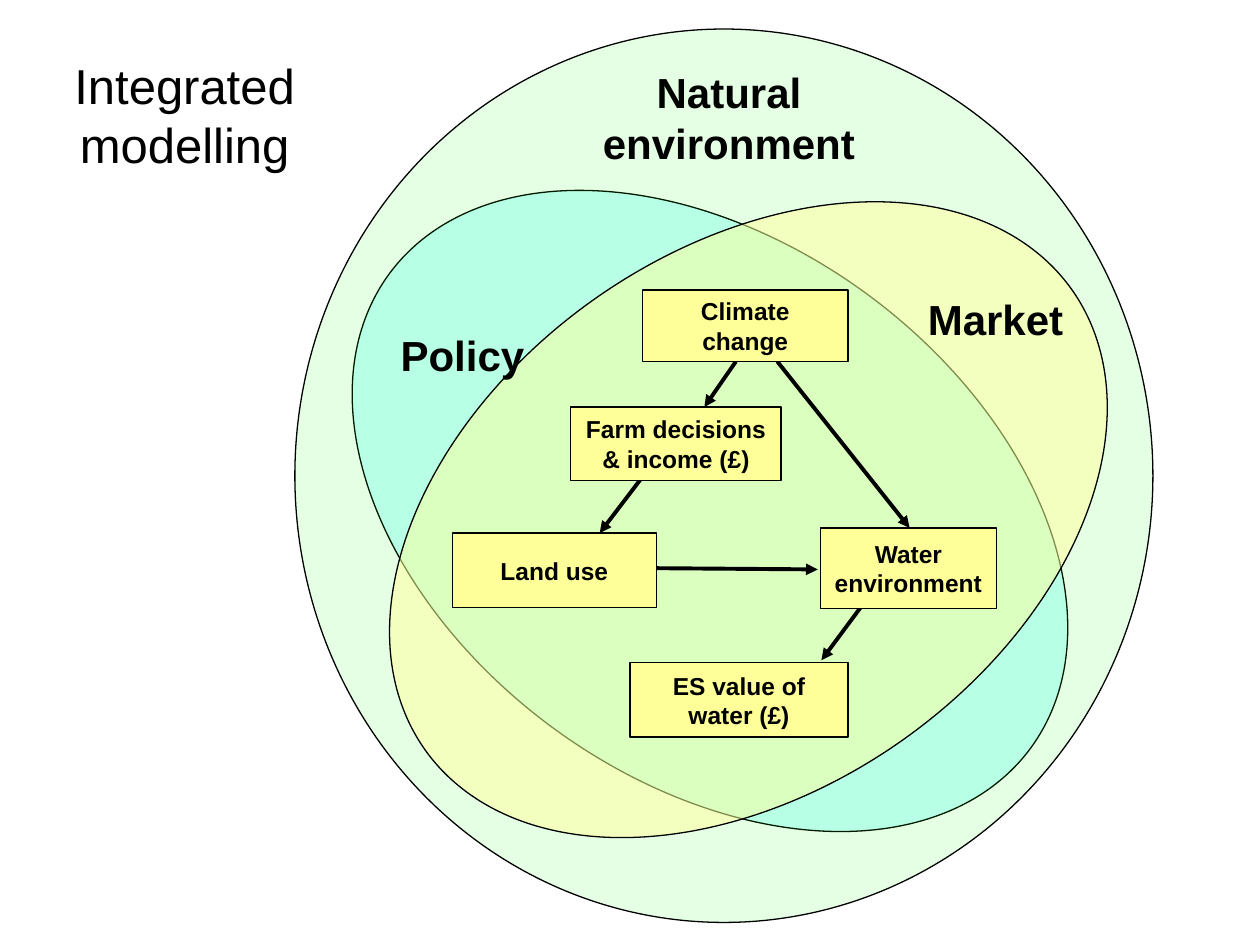
"""Build the integrated modelling slide: three ellipses, a flow of boxes and labels."""
from lxml import etree
from pptx import Presentation
from pptx.dml.color import RGBColor
from pptx.enum.shapes import MSO_CONNECTOR, MSO_SHAPE
from pptx.enum.text import MSO_ANCHOR, PP_ALIGN
from pptx.oxml.ns import qn
from pptx.util import Pt

OVAL, RECT = MSO_SHAPE.OVAL, MSO_SHAPE.RECTANGLE
LINE = MSO_CONNECTOR.STRAIGHT
TOP, MIDDLE = MSO_ANCHOR.TOP, MSO_ANCHOR.MIDDLE
CENTER = PP_ALIGN.CENTER
BLACK, YELLOW = "000000", "FFFF99"

OVALS = [
    ((177.8, 139, 455.8, 306), 36.6, "00FFFF", 20),
    ((168.5, 16.6, 490.3, 510.5), 0, "00FF00", 10),
    ((200.9, 143.3, 453.6, 307.4), 324.5, YELLOW, 50),
]
LABELS = [
    ("Natural environment", (319.7, 34.6, 193.7, 65.5), 24, True, 1),
    ("Policy", (167.4, 185, 193.7, 36), 24, True, 1),
    ("Market", (472, 172.1, 193.7, 27.4), 24, True, 0.7),
    ("Integrated modelling", (25.2, 28.1, 160.6, 74.9), 28, False, 1),
]
BOXES = [
    ("Climate change", (367.2, 165.6, 117.4, 41), 1),
    ("Farm decisions & income (£)", (326.2, 232.6, 120.2, 41.8), 0.75),
    ("Land use", (258.5, 304.6, 116.6, 42.5), 0.75),
    ("Water environment", (468.7, 301.7, 100.8, 46.1), 0.75),
    ("ES value of water (£)", (360, 378.7, 124.6, 42.5), 0.75),
]
ARROWS = [
    (420.5, 206.6, 402.5, 232.6),
    (444.2, 206.6, 519.8, 301.7),
    (365.8, 274.3, 342.7, 304.6),
    (375.1, 324.7, 467.3, 325.4),
    (496.1, 341.3, 469.4, 377.3),
]


def hue(code):
    """Return the colour for a hex string."""
    return RGBColor.from_string(code)


def pts(nums):
    """Turn numbers into point lengths."""
    return [Pt(n) for n in nums]


def write(shape, text, size, bold, anchor, gap=1):
    """Put centred, wrapped text into a shape."""
    frame = shape.text_frame
    frame.word_wrap, frame.vertical_anchor = True, anchor
    para = frame.paragraphs[0]
    para.alignment, para.line_spacing = CENTER, gap
    run = para.add_run()
    run.text = text
    style = {"name": "Arial", "size": Pt(size), "bold": bold}
    for key, value in style.items():
        setattr(run.font, key, value)
    run.font.color.rgb = hue(BLACK)


def draw(slide, kind, area, fill, width):
    """Add a filled, outlined shape."""
    shape = slide.shapes.add_shape(kind, *pts(area))
    shape.shadow.inherit = False
    shape.fill.solid()
    shape.fill.fore_color.rgb = hue(fill)
    shape.line.color.rgb = hue(BLACK)
    shape.line.width = Pt(width)
    return shape


def link(slide, ends):
    """Add an arrow between two points."""
    arrow = slide.shapes.add_connector(LINE, *pts(ends))
    arrow.line.color.rgb = hue(BLACK)
    arrow.line.width = Pt(2.25)
    props = arrow.line._get_or_add_ln()
    etree.SubElement(props, qn("a:tailEnd"), type="triangle")
    etree.SubElement(arrow._element.spPr, qn("a:effectLst"))


def main():
    """Build and save the slide."""
    deck = Presentation()
    deck.slide_width, deck.slide_height = pts((720, 540))
    slide = deck.slides.add_slide(deck.slide_layouts[6])
    for area, turn, fill, alpha in OVALS:
        oval = draw(slide, OVAL, area, fill, 0.75)
        oval.rotation = turn
        tint = oval._element.spPr.find(qn("a:solidFill"))[0]
        etree.SubElement(tint, qn("a:alpha"), val=str(alpha * 1000))
    for text, area, size, bold, gap in LABELS:
        label = slide.shapes.add_textbox(*pts(area))
        write(label, text, size, bold, TOP, gap)
    for ends in ARROWS:
        link(slide, ends)
    for text, area, width in BOXES:
        write(draw(slide, RECT, area, YELLOW, width), text, 14, True, MIDDLE)
    deck.save("out.pptx")


if __name__ == "__main__":
    main()
